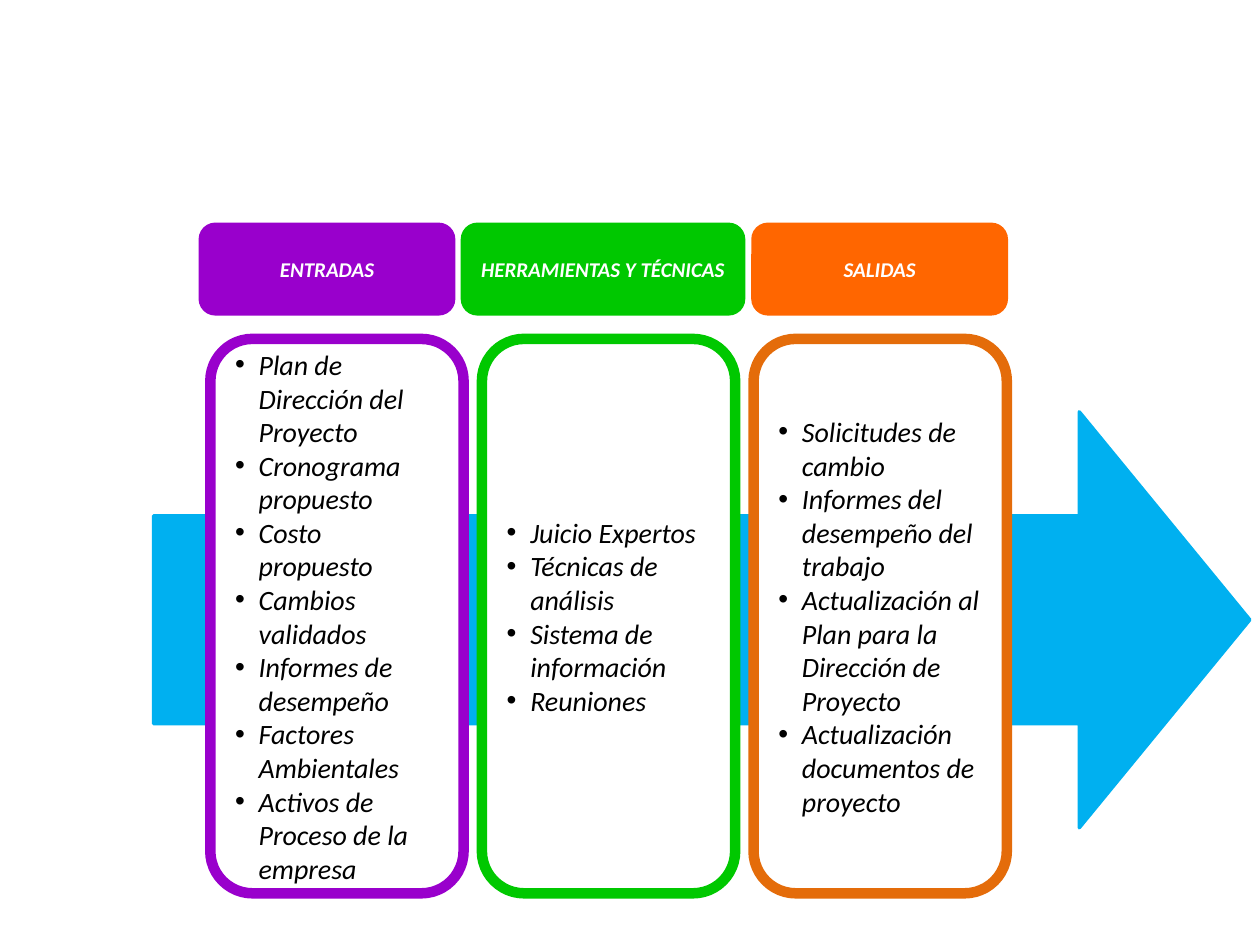
from dataclasses import dataclass

import pptx
import pptx.dml.color
import pptx.enum.shapes
import pptx.enum.text
import pptx.oxml.ns
import pptx.shapes.autoshape
import pptx.shapes.shapetree
import pptx.util
from lxml import etree

Pt = pptx.util.Pt
SHAPE = pptx.enum.shapes.MSO_SHAPE
ALIGN = pptx.enum.text.PP_ALIGN
COLORS = {
    "arrow": "00B0F0",
    "purple": "9900CC",
    "green": "00C800",
    "orange": "FF6600",
    "dark_orange": "E46C0A",
    "white": "FFFFFF",
    "black": "000000",
}
PANEL_LEFT, PANEL_STEP = 120.2, 155.2
BULLET_INDENT = 13.5


@dataclass(frozen=True)
class Stage:
    title: str
    title_left: float
    title_width: float
    title_color: str
    panel_color: str
    items: tuple[str, ...]


STAGES = (
    Stage("ENTRADAS", 114.5, 144.7, "purple", "purple", (
        "Plan de Dirección del Proyecto",
        "Cronograma propuesto",
        "Costo propuesto",
        "Cambios validados",
        "Informes de desempeño",
        "Factores Ambientales",
        "Activos de Proceso de la empresa",
    )),
    Stage("HERRAMIENTAS Y TÉCNICAS", 264.3, 160.6, "green", "green", (
        "Juicio Expertos",
        "Técnicas de análisis",
        "Sistema de información",
        "Reuniones",
    )),
    Stage("SALIDAS", 430.3, 144.7, "orange", "dark_orange", (
        "Solicitudes de cambio",
        "Informes del desempeño del trabajo",
        "Actualización al Plan para la Dirección de Proyecto",
        "Actualización documentos de proyecto",
    )),
)


def rgb(name: str) -> pptx.dml.color.RGBColor:
    return pptx.dml.color.RGBColor.from_string(COLORS[name])


def add_block(
    shapes: pptx.shapes.shapetree.GroupShapes,
    kind: pptx.enum.shapes.MSO_SHAPE,
    bounds: tuple[float, float, float, float],
    fill: str,
    line: str,
    line_width: float,
) -> pptx.shapes.autoshape.Shape:
    block = shapes.add_shape(kind, *(Pt(length) for length in bounds))
    block.shadow.inherit = False
    block.fill.solid()
    block.fill.fore_color.rgb = rgb(fill)
    block.line.color.rgb = rgb(line)
    block.line.width = Pt(line_width)
    return block


def write_text(
    block: pptx.shapes.autoshape.Shape,
    lines: tuple[str, ...],
    size: float,
    color: str,
    bold: bool,
    bulleted: bool,
) -> None:
    frame = block.text_frame
    frame.word_wrap = True
    frame.vertical_anchor = pptx.enum.text.MSO_ANCHOR.MIDDLE
    frame.text = "\n".join(lines)
    for para in frame.paragraphs:
        para.alignment = ALIGN.LEFT if bulleted else ALIGN.CENTER
        if bulleted:
            add_bullet(para)
        for span in para.runs:
            span.font.name = "Calibri"
            span.font.size = Pt(size)
            span.font.bold = bold
            span.font.italic = True
            span.font.color.rgb = rgb(color)


def add_bullet(para) -> None:
    properties = para._p.get_or_add_pPr()
    properties.set("marL", str(Pt(BULLET_INDENT)))
    properties.set("indent", str(-Pt(BULLET_INDENT)))
    qn = pptx.oxml.ns.qn
    etree.SubElement(properties, qn("a:buFont")).set("typeface", "Arial")
    etree.SubElement(properties, qn("a:buChar")).set("char", "•")


def add_panel(shapes: pptx.shapes.shapetree.GroupShapes, index: int, stage: Stage) -> None:
    bounds = (PANEL_LEFT + index * PANEL_STEP, 193.7, 144.7, 316.8)
    panel = add_block(shapes, SHAPE.ROUNDED_RECTANGLE, bounds, "white", stage.panel_color, 6)
    write_text(panel, stage.items, 16, "black", False, True)


def add_header(shapes: pptx.shapes.shapetree.GroupShapes, stage: Stage) -> None:
    bounds = (stage.title_left, 128.2, stage.title_width, 51.1)
    color = stage.title_color
    header = add_block(shapes, SHAPE.ROUNDED_RECTANGLE, bounds, color, color, 2)
    header.text_frame.margin_left = header.text_frame.margin_right = Pt(4)
    write_text(header, (stage.title,), 12, "white", True, False)


def main() -> None:
    deck = pptx.Presentation()
    deck.slide_width, deck.slide_height = Pt(720), Pt(540)
    page = deck.slides.add_slide(deck.slide_layouts[6])
    shapes = page.shapes.add_group_shape().shapes

    arrow_bounds = (87.8, 235.4, 626.4, 237.6)
    arrow = add_block(shapes, SHAPE.RIGHT_ARROW, arrow_bounds, "arrow", "arrow", 2)
    arrow.adjustments[0] = 0.5
    arrow.adjustments[1] = 0.41

    for index, stage in enumerate(STAGES):
        add_panel(shapes, index, stage)
    for stage in STAGES:
        add_header(shapes, stage)
    deck.save("out.pptx")


if __name__ == "__main__":
    main()
